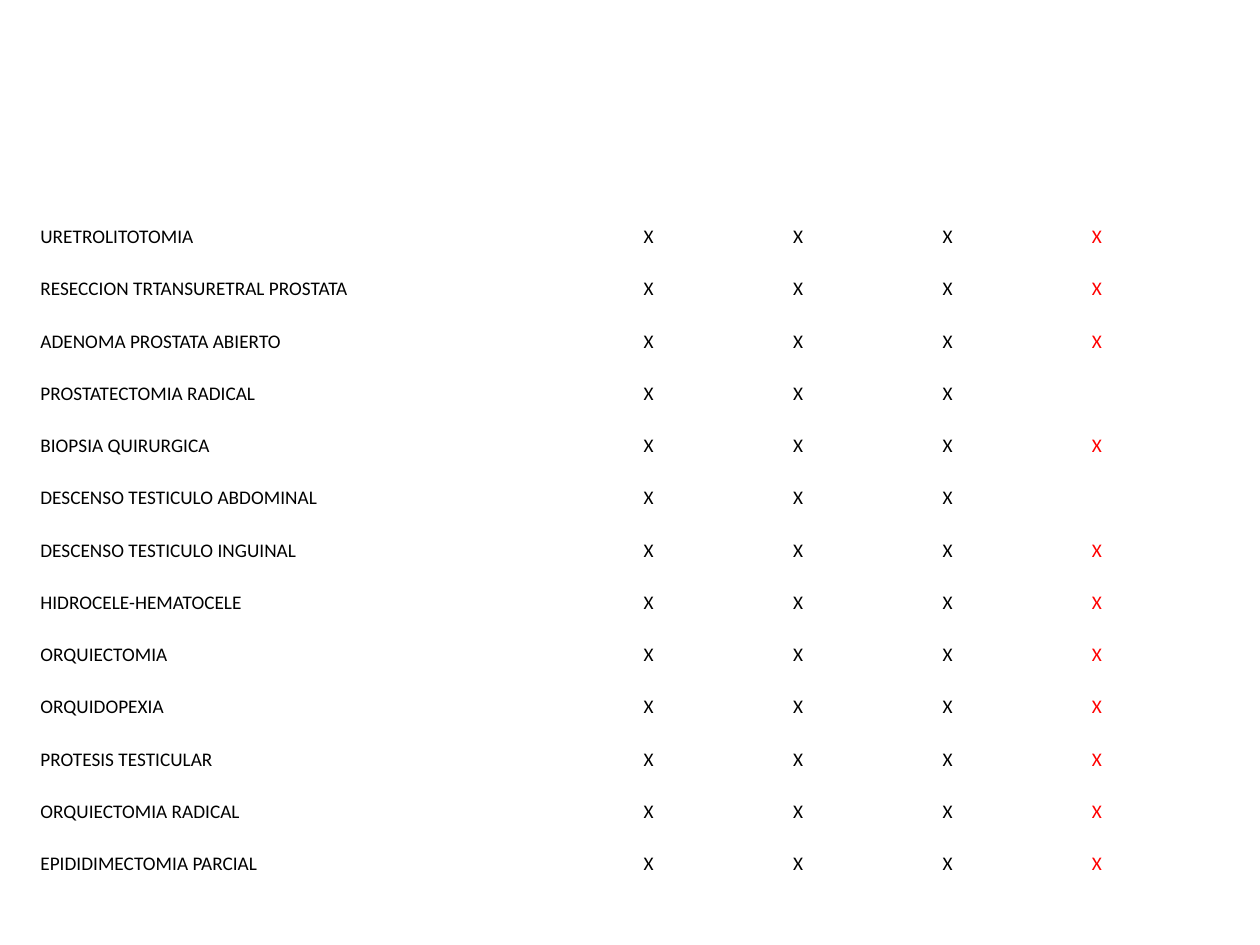
from pptx import Presentation
from pptx.dml.color import RGBColor
from pptx.enum.text import MSO_ANCHOR
from pptx.util import Pt

BLACK = RGBColor(0, 0, 0)
RED = RGBColor(255, 0, 0)

PROCEDURES = [
    ("URETROLITOTOMIA", "X"),
    ("RESECCION TRTANSURETRAL PROSTATA", "X"),
    ("ADENOMA PROSTATA ABIERTO", "X"),
    ("PROSTATECTOMIA RADICAL", ""),
    ("BIOPSIA QUIRURGICA", "X"),
    ("DESCENSO TESTICULO ABDOMINAL", ""),
    ("DESCENSO TESTICULO INGUINAL", "X"),
    ("HIDROCELE-HEMATOCELE", "X"),
    ("ORQUIECTOMIA", "X"),
    ("ORQUIDOPEXIA", "X"),
    ("PROTESIS TESTICULAR", "X"),
    ("ORQUIECTOMIA RADICAL", "X"),
    ("EPIDIDIMECTOMIA PARCIAL", "X"),
]
COLUMN_WIDTHS = [344.8] + [85.4] * 4
COLUMN_COLORS = [BLACK] * 4 + [RED]
LEFT, TOP = 22.4, 112.4
ROW_HEIGHT = 29.85
INSET = 0.7


def format_cell(cell, text, color):
    cell.text = text
    cell.fill.background()
    cell.vertical_anchor = MSO_ANCHOR.BOTTOM
    cell.margin_left = cell.margin_right = cell.margin_top = Pt(INSET)
    cell.margin_bottom = Pt(0)
    font = cell.text_frame.paragraphs[0].font
    font.name = "Calibri"
    font.size = Pt(11)
    font.color.rgb = color


def main():
    presentation = Presentation()
    presentation.slide_width, presentation.slide_height = Pt(720), Pt(540)
    slide = presentation.slides.add_slide(presentation.slide_layouts[6])

    table = slide.shapes.add_table(
        len(PROCEDURES), len(COLUMN_WIDTHS), Pt(LEFT), Pt(TOP),
        Pt(sum(COLUMN_WIDTHS)), Pt(ROW_HEIGHT * len(PROCEDURES)),
    ).table
    table.first_row = table.horz_banding = False
    for column, width in zip(table.columns, COLUMN_WIDTHS):
        column.width = Pt(width)
    for row, (procedure, last_mark) in zip(table.rows, PROCEDURES):
        row.height = Pt(ROW_HEIGHT)
        texts = [procedure, "X", "X", "X", last_mark]
        for cell, text, color in zip(row.cells, texts, COLUMN_COLORS):
            format_cell(cell, text, color)

    presentation.save("out.pptx")


if __name__ == "__main__":
    main()
